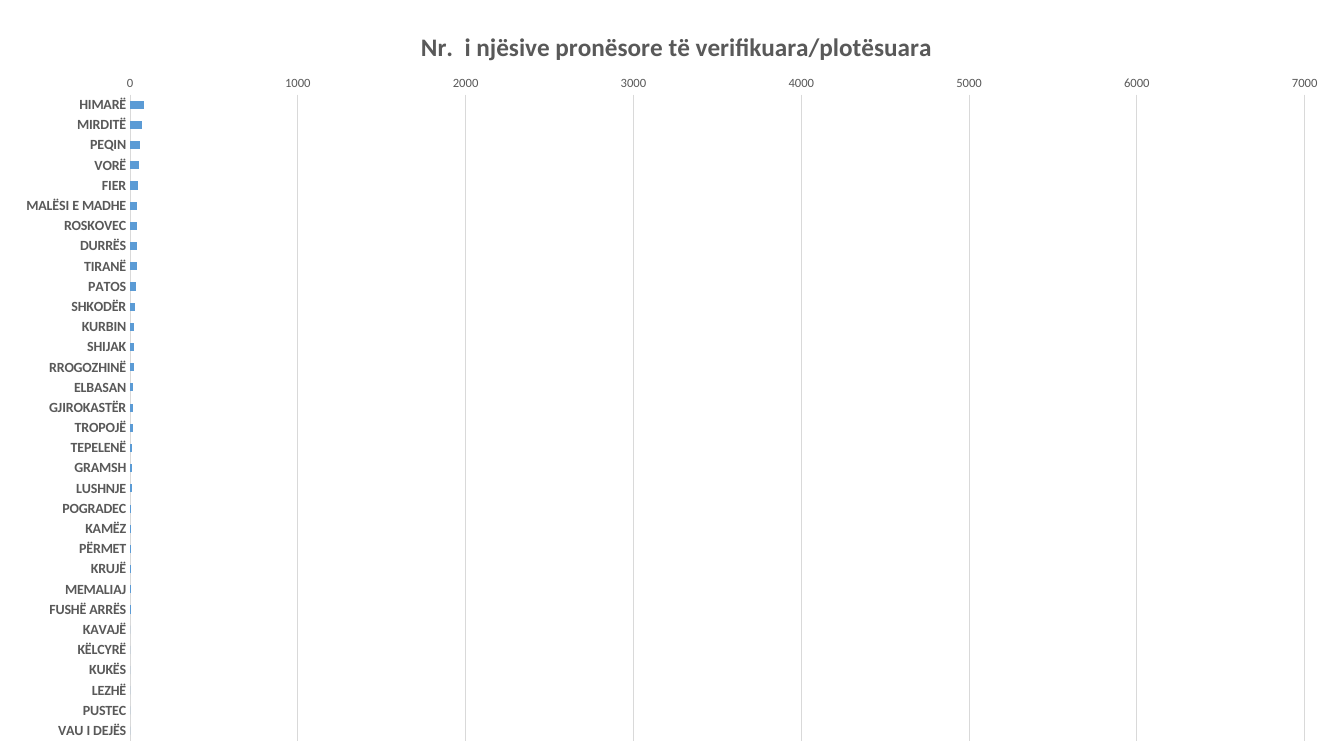
from dataclasses import dataclass

from pptx import Presentation
from pptx.chart.data import CategoryChartData
from pptx.dml.color import RGBColor
from pptx.enum.chart import XL_CHART_TYPE, XL_TICK_MARK
from pptx.oxml import parse_xml
from pptx.oxml.ns import nsdecls
from pptx.util import Pt

BAR_CLUSTERED = XL_CHART_TYPE.BAR_CLUSTERED
NO_TICK = XL_TICK_MARK.NONE
EMU_PER_PX = 9144
SLIDE_WIDTH, SLIDE_HEIGHT = 1333, 750

HEADING = "Nr.  i njësive pronësore të verifikuara/plotësuara"
VERIFIED_UNITS = {
    "HIMARË": 83, "MIRDITË": 70, "PEQIN": 60, "VORË": 53,
    "FIER": 47, "MALËSI E MADHE": 42, "ROSKOVEC": 42, "DURRËS": 41,
    "TIRANË": 40, "PATOS": 34, "SHKODËR": 28, "KURBIN": 25,
    "SHIJAK": 24, "RROGOZHINË": 23, "ELBASAN": 18, "GJIROKASTËR": 17,
    "TROPOJË": 16, "TEPELENË": 12, "GRAMSH": 11, "LUSHNJE": 10,
    "POGRADEC": 7, "KAMËZ": 6, "PËRMET": 6, "KRUJË": 5,
    "MEMALIAJ": 4, "FUSHË ARRËS": 4, "KAVAJË": 0, "KËLCYRË": 0,
    "KUKËS": 0, "LEZHË": 0, "PUSTEC": 0, "VAU I DEJËS": 0,
}


@dataclass(frozen=True)
class Theme:
    font: str = "Calibri"
    text: str = "595959"
    grid: str = "D9D9D9"
    bar: str = "5B9BD5"
    heading_size: int = 18
    category_size: int = 10
    scale_size: int = 9
    grid_width: float = 0.75


def px(length):
    return length * EMU_PER_PX


def apply(target, values):
    for attribute, value in values.items():
        setattr(target, attribute, value)


class SlideBuilder:
    def __init__(self, slide, theme):
        self.slide = slide
        self.theme = theme

    def style_font(self, font, size, bold):
        apply(font, {"name": self.theme.font, "size": Pt(size), "bold": bold})
        font.color.rgb = RGBColor.from_string(self.theme.text)

    def style_axis(self, axis, size, bold, settings):
        apply(axis, {"major_tick_mark": NO_TICK, "minor_tick_mark": NO_TICK, **settings})
        axis.format.line.fill.background()
        self.style_font(axis.tick_labels.font, size, bold)

    def place(self, part, left, top, width=None, height=None, inner=False):
        fractions = {"x": left / SLIDE_WIDTH, "y": top / SLIDE_HEIGHT}
        if width:
            fractions.update(w=width / SLIDE_WIDTH, h=height / SLIDE_HEIGHT)
        target = '<c:layoutTarget val="inner"/>' if inner else ""
        modes = '<c:xMode val="edge"/><c:yMode val="edge"/>'
        sizes = "".join(f'<c:{key} val="{value:.4f}"/>' for key, value in fractions.items())
        for previous in part.findall(part.tag.split("}")[0] + "}layout"):
            part.remove(previous)
        layout = parse_xml(
            f'<c:layout {nsdecls("c")}><c:manualLayout>{target}{modes}{sizes}'
            "</c:manualLayout></c:layout>"
        )
        position = 0 if inner else 1
        part.insert(position, layout)

    def bar_chart(self, heading, values, maximum, step):
        units = CategoryChartData()
        units.categories = list(values)
        units.add_series(heading, list(values.values()))
        chart = self.slide.shapes.add_chart(
            BAR_CLUSTERED, 0, 0, px(SLIDE_WIDTH), px(SLIDE_HEIGHT), units
        ).chart
        apply(chart, {"has_legend": False, "has_title": True})
        apply(chart.font, {"name": self.theme.font, "size": Pt(self.theme.category_size)})

        title = chart.chart_title
        title.include_in_layout = False
        title.text_frame.text = heading
        self.style_font(
            title.text_frame.paragraphs[0].runs[0].font, self.theme.heading_size, True
        )
        self.place(title._element, 413, 25)

        self.style_axis(
            chart.category_axis, self.theme.category_size, True, {"reverse_order": True}
        )
        scale = chart.value_axis
        self.style_axis(
            scale, self.theme.scale_size, False,
            {"minimum_scale": 0, "maximum_scale": maximum,
             "major_unit": step, "has_major_gridlines": True},
        )
        grid = scale.major_gridlines.format.line
        grid.width = Pt(self.theme.grid_width)
        grid.color.rgb = RGBColor.from_string(self.theme.grid)

        plot = chart.plots[0]
        apply(plot, {"gap_width": 150, "vary_by_categories": False})
        fill = plot.series[0].format.fill
        fill.solid()
        fill.fore_color.rgb = RGBColor.from_string(self.theme.bar)
        self.place(chart._chartSpace.chart.plotArea, 129, 94, 1165, 641, inner=True)


def main():
    deck = Presentation()
    apply(deck, {"slide_width": px(SLIDE_WIDTH), "slide_height": px(SLIDE_HEIGHT)})
    builder = SlideBuilder(deck.slides.add_slide(deck.slide_layouts[6]), Theme())
    builder.bar_chart(HEADING, VERIFIED_UNITS, 7000, 1000)
    deck.save("out.pptx")


if __name__ == "__main__":
    main()
